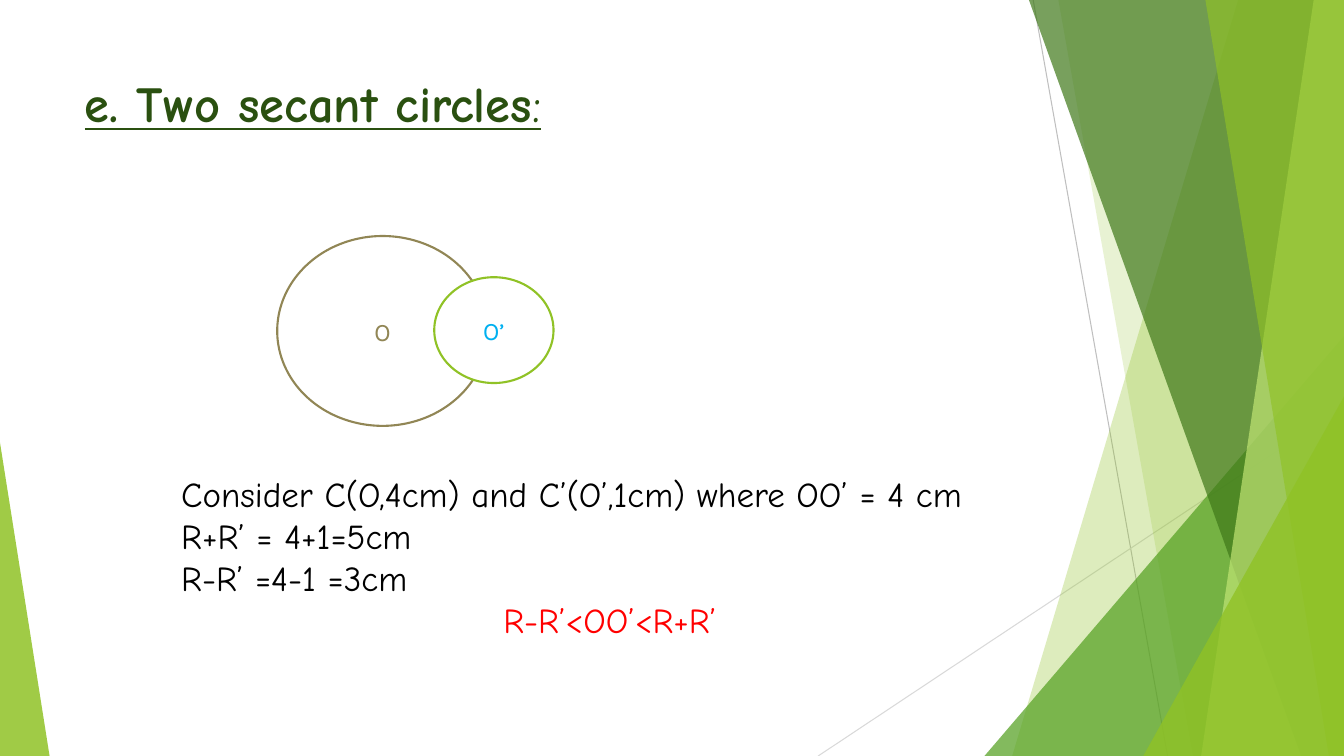
"""Build the slide on two secant circles, laid out on a grid of 80 columns by 45 rows."""
from dataclasses import dataclass

from lxml import etree
from pptx import Presentation
from pptx import util as u
from pptx.dml.color import RGBColor
from pptx.enum import shapes, text
from pptx.oxml.ns import qn

COLS, ROWS = 80, 45
CELL = u.Emu(152400)

WHITE = RGBColor(0xFF, 0xFF, 0xFF)
BLACK = RGBColor(0x00, 0x00, 0x00)
RED = RGBColor(0xFF, 0x00, 0x00)
BLUE = RGBColor(0x00, 0xB0, 0xF0)
OLIVE = RGBColor(0x91, 0x86, 0x55)
LIME = RGBColor(0x90, 0xC2, 0x26)
PALE_LIME = RGBColor(0xC0, 0xE4, 0x74)
GREEN = RGBColor(0x54, 0xA0, 0x21)
FOREST = RGBColor(0x3F, 0x78, 0x19)
DARK_GREEN = RGBColor(0x2A, 0x50, 0x10)
GREY = RGBColor(0xBF, 0xBF, 0xBF)
LIGHT_GREY = RGBColor(0xD9, 0xD9, 0xD9)

HEADING_FONT, LABEL_FONT = "Comic Neue", "Karla"


@dataclass
class Box:
    left: float
    top: float
    width: float
    height: float

    def emu(self) -> list[int]:
        return [cells(n) for n in (self.left, self.top, self.width, self.height)]


@dataclass
class Ray:
    start: tuple[float, float]
    end: tuple[float, float]
    color: RGBColor


@dataclass
class Facet:
    top_col: float
    bottom_col: float
    color: RGBColor
    alpha: int


@dataclass
class Corner:
    box: Box
    apex: float
    color: RGBColor
    alpha: int


@dataclass
class Circle:
    label: str
    box: Box
    line: RGBColor
    label_color: RGBColor


TITLE_BOX = Box(4.45, 4, 56.4, 8.65)
BODY_BOX = Box(10.2, 27.85, 52.2, 10.7)

RAYS = [
    Ray((61.5, 0), (69.5, ROWS), GREY),
    Ray((COLS, 24.2), (48.7, ROWS), LIGHT_GREY),
]
DECOR = [
    Facet(73.7, 60.25, LIME, 30),
    Facet(63, 71, LIME, 20),
    Corner(Box(58.6, 20, 21.4, 25), 1, GREEN, 72),
    Facet(61.25, 77.45, FOREST, 70),
    Facet(78.2, 71.5, PALE_LIME, 70),
    Facet(71.75, 79.1, LIME, 65),
    Corner(Box(68.05, 23.6, 11.95, 21.4), 1, LIME, 80),
    Corner(Box(0, 26.35, 2.95, 18.65), 0, LIME, 85),
]
CIRCLES = [
    Circle("O", Box(16.5, 14.05, 12.55, 11.3), OLIVE, OLIVE),
    Circle("O’", Box(25.85, 16.5, 7.1, 6.3), LIME, BLUE),
]
STATEMENTS = [
    ("Consider C(O,4cm) and C’(O’,1cm) where OO’ = 4 cm", BLACK, text.PP_ALIGN.LEFT),
    ("R+R’ = 4+1=5cm", BLACK, text.PP_ALIGN.LEFT),
    ("R-R’ =4-1 =3cm", BLACK, text.PP_ALIGN.LEFT),
    ("R-R’<OO’<R+R’", RED, text.PP_ALIGN.CENTER),
]


def cells(n: float) -> int:
    return round(n * CELL)


def write(p, words: str, *, size: float, color: RGBColor, font: str = HEADING_FONT,
          bold: bool = False, underline: bool = False, align=text.PP_ALIGN.LEFT) -> None:
    p.alignment = align
    r = p.add_run()
    r.text = words
    r.font.name, r.font.size = font, u.Pt(size)
    r.font.bold, r.font.underline = bold, underline
    r.font.color.rgb = color


def paint(sp, color: RGBColor, alpha: int = 100) -> None:
    sp.shadow.inherit = False
    sp.fill.solid()
    sp.fill.fore_color.rgb = color
    sp.line.fill.background()
    if alpha < 100:
        clr = sp.fill._xPr.find(qn("a:solidFill"))[0]
        etree.SubElement(clr, qn("a:alpha"), val=str(alpha * 1000))


def draw_ray(s, ray: Ray) -> None:
    ends = [cells(n) for n in (*ray.start, *ray.end)]
    line = s.shapes.add_connector(shapes.MSO_CONNECTOR.STRAIGHT, *ends)
    line.line.color.rgb = ray.color
    line.line.width = u.Pt(0.75)
    etree.SubElement(line._element.spPr, qn("a:effectLst"))


def draw_facet(s, facet: Facet) -> None:
    corners = [(COLS, 0), (COLS, ROWS), (facet.bottom_col, ROWS)]
    outline = s.shapes.build_freeform(cells(facet.top_col), 0)
    outline.add_line_segments([(cells(x), cells(y)) for x, y in corners], close=True)
    paint(outline.convert_to_shape(), facet.color, facet.alpha)


def draw_corner(s, corner: Corner) -> None:
    sp = s.shapes.add_shape(shapes.MSO_SHAPE.ISOSCELES_TRIANGLE, *corner.box.emu())
    sp.adjustments[0] = corner.apex
    paint(sp, corner.color, corner.alpha)


def draw_circle(s, circle: Circle) -> None:
    sp = s.shapes.add_shape(shapes.MSO_SHAPE.FLOWCHART_CONNECTOR, *circle.box.emu())
    paint(sp, WHITE)
    sp.line.color.rgb = circle.line
    sp.line.width = u.Pt(1.5)
    tf = sp.text_frame
    tf.vertical_anchor = text.MSO_ANCHOR.MIDDLE
    write(tf.paragraphs[0], circle.label, size=18, color=circle.label_color,
          font=LABEL_FONT, align=text.PP_ALIGN.CENTER)


def write_title(s) -> None:
    title = s.shapes.title
    title.left, title.top, title.width, title.height = TITLE_BOX.emu()
    tf = title.text_frame
    tf.vertical_anchor = text.MSO_ANCHOR.TOP
    tf.auto_size = text.MSO_AUTO_SIZE.NONE
    for words, bold in (("e. Two secant circles", True), (":", False)):
        write(tf.paragraphs[0], words, size=36, color=DARK_GREEN, bold=bold, underline=True)


def write_statements(s) -> None:
    tf = s.shapes.add_textbox(*BODY_BOX.emu()).text_frame
    tf.word_wrap = True
    tf.auto_size = text.MSO_AUTO_SIZE.SHAPE_TO_FIT_TEXT
    for i, (words, color, align) in enumerate(STATEMENTS):
        p = tf.add_paragraph() if i else tf.paragraphs[0]
        write(p, words, size=25, color=color, align=align)


def main() -> None:
    prs = Presentation()
    prs.slide_width, prs.slide_height = cells(COLS), cells(ROWS)
    s = prs.slides.add_slide(prs.slide_layouts.get_by_name("Title Only"))
    for ray in RAYS:
        draw_ray(s, ray)
    for piece in DECOR:
        if isinstance(piece, Facet):
            draw_facet(s, piece)
        else:
            draw_corner(s, piece)
    write_title(s)
    for circle in CIRCLES:
        draw_circle(s, circle)
    write_statements(s)
    prs.save("out.pptx")


if __name__ == "__main__":
    main()
